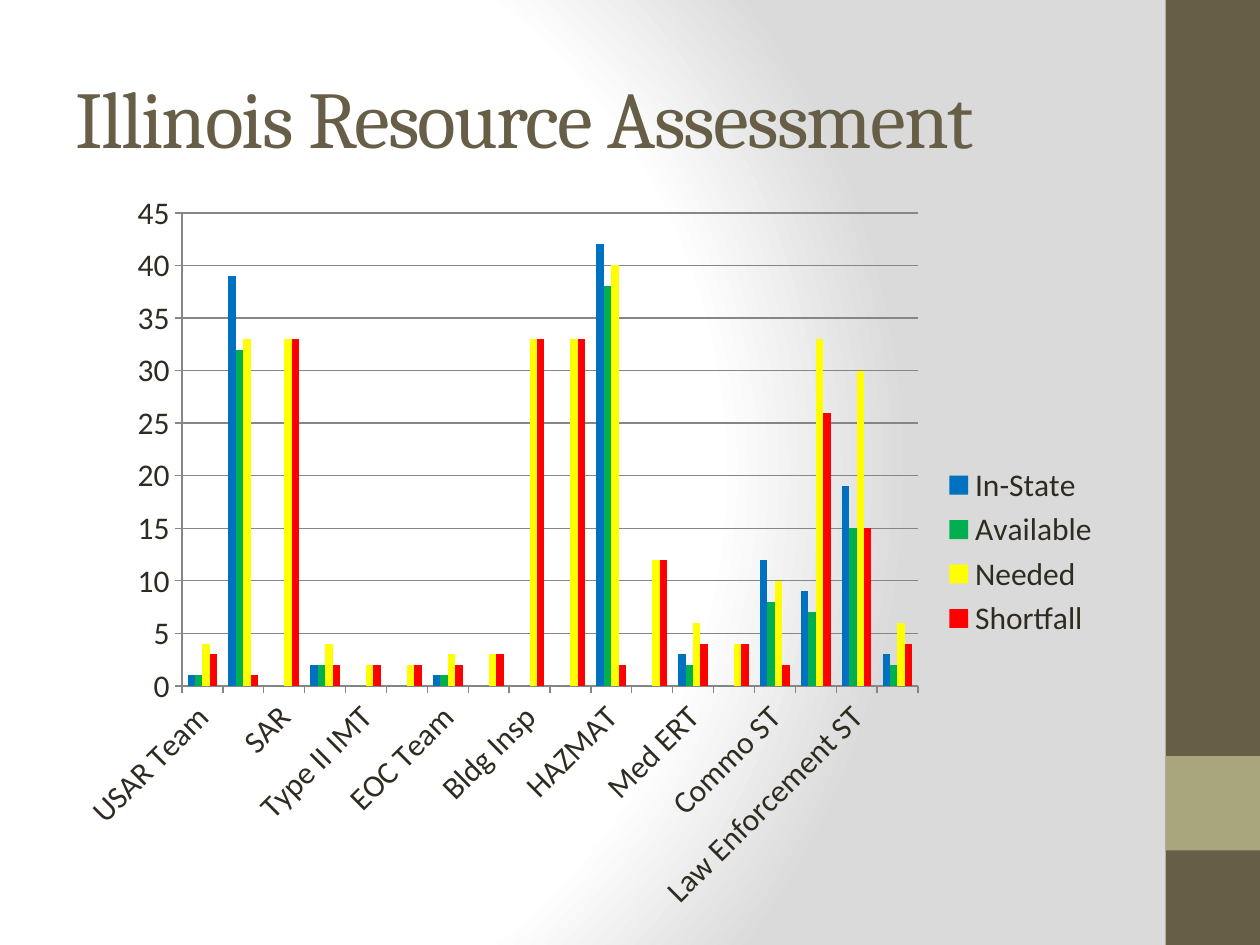
from lxml import etree
from pptx import Presentation
from pptx.chart.data import CategoryChartData
from pptx.dml.color import RGBColor
from pptx.enum import chart as ch, shapes, text
from pptx.oxml import parse_xml
from pptx.oxml.ns import qn
from pptx.util import Inches, Pt

COLORS = {
    "olive": "675E47", "sage": "A9A57C", "ink": "2F2B20", "axis": "868686",
    "white": "FFFFFF", "gray": "DADADA",
    "In-State": "0070C0", "Available": "00B050",
    "Needed": "FFFF00", "Shortfall": "FF0000",
}
TITLE = "Illinois Resource Assessment"
SERIES = ("In-State", "Available", "Needed", "Shortfall")
RESOURCES = [
    ("USAR Team", 1, 1, 4, 3),
    ("TRT", 39, 32, 33, 1),
    ("SAR", 0, 0, 33, 33),
    ("Type III IMT", 2, 2, 4, 2),
    ("Type II IMT", 0, 0, 2, 2),
    ("Type I IMT", 0, 0, 2, 2),
    ("EOC Team", 1, 1, 3, 2),
    ("EMAC A-Team", 0, 0, 3, 3),
    ("Bldg Insp", 0, 0, 33, 33),
    ("Bridge Insp", 0, 0, 33, 33),
    ("HAZMAT", 42, 38, 40, 2),
    ("Ambulance ST", 0, 0, 12, 12),
    ("Med ERT", 3, 2, 6, 4),
    ("Water Rescue", 0, 0, 4, 4),
    ("Commo ST", 12, 8, 10, 2),
    ("Debris Removal", 9, 7, 33, 26),
    ("Law Enforcement ST", 19, 15, 30, 15),
    ("Crowd Control", 3, 2, 6, 4),
]
SIDEBAR = [(0, 7.5, "olive"), (6, 0.75, "sage")]
BACKDROP = [(0, "white"), (75, "white"), (100, "gray")]


def color(name):
    return RGBColor.from_string(COLORS[name])


def paint_backdrop(slide):
    slide.background.fill.solid()
    solid = next(slide.element.iter(qn("a:solidFill")))
    stops = "".join(
        f'<a:gs pos="{pos * 1000}"><a:srgbClr val="{COLORS[name]}"/></a:gs>'
        for pos, name in BACKDROP)
    gradient = parse_xml(
        '<a:gradFill xmlns:a="http://schemas.openxmlformats.org/drawingml/2006/main"'
        f' rotWithShape="1"><a:gsLst>{stops}</a:gsLst><a:path path="circle">'
        '<a:fillToRect l="20000" t="50000" r="100000" b="50000"/>'
        '</a:path></a:gradFill>')
    solid.getparent().replace(solid, gradient)


def add_sidebar(slide):
    for top, height, name in SIDEBAR:
        band = slide.shapes.add_shape(
            shapes.MSO_SHAPE.RECTANGLE,
            Inches(9.25), Inches(top), Inches(0.75), Inches(height))
        band.shadow.inherit = False
        band.fill.solid()
        band.fill.fore_color.rgb = color(name)
        band.line.fill.background()


def add_title(slide):
    title = slide.shapes.add_textbox(
        Inches(0.5), Inches(0.3), Inches(8.33), Inches(1.25))
    frame = title.text_frame
    frame.word_wrap = True
    frame.vertical_anchor = text.MSO_ANCHOR.MIDDLE
    heading = frame.paragraphs[0]
    run = heading.add_run()
    run.text = TITLE
    run.font.name = "Cambria"
    run.font.size = Pt(46)
    run.font.color.rgb = color("olive")
    run.font._element.set("spc", "-100")


def add_resource_chart(slide):
    names, *columns = zip(*RESOURCES)
    data = CategoryChartData()
    data.categories = names
    for label, values in zip(SERIES, columns):
        data.add_series(label, values)
    chart = slide.shapes.add_chart(
        ch.XL_CHART_TYPE.COLUMN_CLUSTERED, Inches(0.5), Inches(1.42),
        Inches(8.33), Inches(5.92), data).chart
    chart.has_title = False
    chart.font.name = "Calibri"
    chart.font.size = Pt(18)
    chart.font.color.rgb = color("ink")

    chart.has_legend = True
    chart.legend.position = ch.XL_LEGEND_POSITION.RIGHT
    chart.legend.include_in_layout = False

    plot = chart.plots[0]
    plot.gap_width = 150
    plot.vary_by_categories = False
    for series in plot.series:
        series.format.fill.solid()
        series.format.fill.fore_color.rgb = color(series.name)
        series.invert_if_negative = False

    chart.value_axis.has_major_gridlines = True
    for axis in (chart.category_axis, chart.value_axis):
        axis.major_tick_mark = ch.XL_TICK_MARK.OUTSIDE
        axis.minor_tick_mark = ch.XL_TICK_MARK.NONE
    for part in (chart.category_axis, chart.value_axis,
                 chart.value_axis.major_gridlines):
        part.format.line.color.rgb = color("axis")
        part.format.line.width = Pt(0.75)


def main():
    deck = Presentation()
    deck.slide_width, deck.slide_height = Inches(10), Inches(7.5)
    slide = deck.slides.add_slide(deck.slide_layouts[6])
    paint_backdrop(slide)
    add_sidebar(slide)
    add_title(slide)
    add_resource_chart(slide)
    deck.save("out.pptx")


if __name__ == "__main__":
    main()
